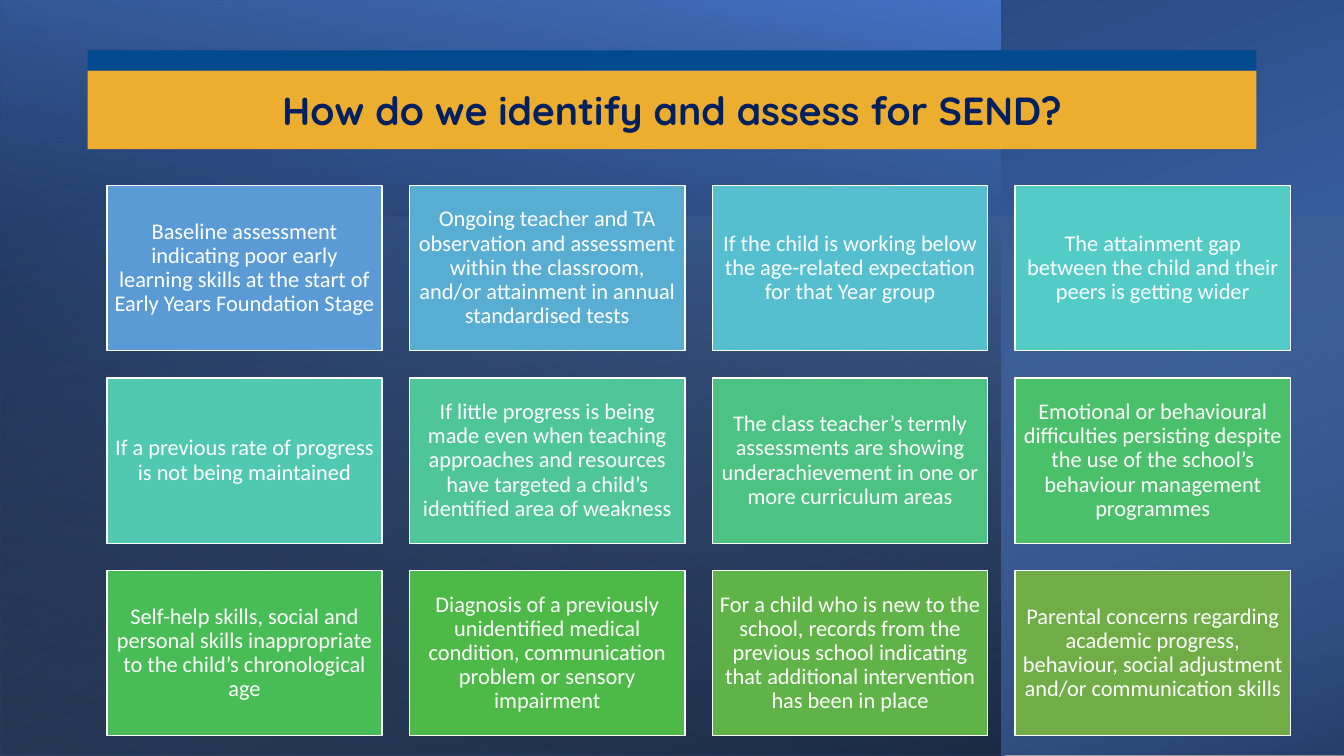
from lxml import etree
from pptx import Presentation
from pptx.dml.color import RGBColor
from pptx.enum.shapes import MSO_SHAPE
from pptx.enum.text import MSO_ANCHOR, MSO_AUTO_SIZE, PP_ALIGN
from pptx.oxml.ns import qn
from pptx.util import Inches, Pt

RECTANGLE = MSO_SHAPE.RECTANGLE
MIDDLE = MSO_ANCHOR.MIDDLE
CENTER = PP_ALIGN.CENTER

WHITE = RGBColor(0xFF, 0xFF, 0xFF)
BLACK = RGBColor(0x00, 0x00, 0x00)
BLUE = RGBColor(0x44, 0x72, 0xC4)
DARK_BLUE = RGBColor(0x20, 0x38, 0x64)
PALE_BLUE = RGBColor(0x9D, 0xC3, 0xE6)
NAVY = RGBColor(0x00, 0x20, 0x60)
GOLD = RGBColor(0xED, 0xAE, 0x2F)
STRIPE_BLUE = RGBColor(0x01, 0x4A, 0x8E)

TITLE = "How do we identify and assess for SEND?"
INDICATORS = [
    ("5B9BD5", "Baseline assessment indicating poor early learning skills at the start of Early Years Foundation Stage"),
    ("58ADD2", "Ongoing teacher and TA observation and assessment within the classroom, and/or attainment in annual standardised tests"),
    ("56BFCF", "If the child is working below the age-related expectation for that Year group"),
    ("53CCC8", "The attainment gap between the child and their peers is getting wider"),
    ("51C9B0", "If a previous rate of progress is not being maintained"),
    ("4FC699", "If little progress is being made even when teaching approaches and resources have targeted a child’s identified area of weakness"),
    ("4CC382", "The class teacher’s termly assessments are showing underachievement in one or more curriculum areas"),
    ("4AC06B", "Emotional or behavioural difficulties persisting despite the use of the school’s behaviour management programmes"),
    ("48BC55", "Self-help skills, social and personal skills inappropriate to the child’s chronological age"),
    ("4DB946", "Diagnosis of a previously unidentified medical condition, communication problem or sensory impairment"),
    ("60B347", "For a child who is new to the school, records from the previous school indicating that additional intervention has been in place"),
    ("70AD47", "Parental concerns regarding academic progress, behaviour, social adjustment and/or communication skills"),
]

SLIDE_WIDTH, SLIDE_HEIGHT = 13.33, 7.5
BACKDROPS = [
    ((2.92, -2.92, SLIDE_HEIGHT, SLIDE_WIDTH), 270, 200, [(8, BLUE, 100), (100, DARK_BLUE, 100)]),
    ((0, 0, 9.92, SLIDE_HEIGHT), 180, 80, [(8, BLACK, 52), (100, BLUE, 100)]),
    ((3.99, -1.84, 5.35, SLIDE_WIDTH), 270, 20, [(0, PALE_BLUE, 0), (100, BLACK, 46)]),
]
BANNER_LEFT, BANNER_WIDTH = 0.87, 11.59
STRIPE_TOP, STRIPE_HEIGHT = 0.5, 0.2
TITLE_HEIGHT = 0.78
COLUMNS = 4
GRID_LEFT, GRID_TOP = 1.06, 1.84
TILE_WIDTH = 2.73
TILE_HEIGHT = TILE_WIDTH * 0.6
TILE_GAP = TILE_WIDTH * 0.1
TILE_INSET = 0.07


def add_rectangle(slide, left, top, width, height):
    shape = slide.shapes.add_shape(
        RECTANGLE, Inches(left), Inches(top), Inches(width), Inches(height))
    shape.shadow.inherit = False
    shape.line.fill.background()
    return shape


def fill_solid(shape, color):
    shape.fill.solid()
    shape.fill.fore_color.rgb = color


def fill_gradient(shape, angle, stops):
    shape.fill.background()
    properties = shape.element.spPr
    gradient = etree.Element(qn("a:gradFill"), rotWithShape="1")
    stop_list = etree.SubElement(gradient, qn("a:gsLst"))
    for position, color, opacity in stops:
        stop = etree.SubElement(stop_list, qn("a:gs"), pos=str(position * 1000))
        value = etree.SubElement(stop, qn("a:srgbClr"), val=str(color))
        if opacity < 100:
            etree.SubElement(value, qn("a:alpha"), val=str(opacity * 1000))
    etree.SubElement(gradient, qn("a:lin"), ang=str(angle * 60000), scaled="0")
    properties.replace(properties.find(qn("a:noFill")), gradient)


def write_text(shape, text, font_name, size, color, bold=False):
    frame = shape.text_frame
    frame.word_wrap = True
    frame.auto_size = MSO_AUTO_SIZE.NONE
    frame.vertical_anchor = MIDDLE
    paragraph = frame.paragraphs[0]
    paragraph.alignment = CENTER
    run = paragraph.add_run()
    run.text = text
    run.font.name = font_name
    run.font.size = Pt(size)
    run.font.bold = bold
    run.font.color.rgb = color
    return paragraph


def add_backdrops(slide):
    for box, rotation, angle, stops in BACKDROPS:
        backdrop = add_rectangle(slide, *box)
        backdrop.rotation = rotation
        backdrop.element.spPr.find(qn("a:xfrm")).set("flipH", "1")
        fill_gradient(backdrop, angle, stops)


def add_banner(slide):
    title = slide.shapes.title
    title.left, title.top = Inches(BANNER_LEFT), Inches(STRIPE_TOP + STRIPE_HEIGHT)
    title.width, title.height = Inches(BANNER_WIDTH), Inches(TITLE_HEIGHT)
    fill_solid(title, GOLD)
    write_text(title, TITLE, "Quicksand", 28, NAVY, bold=True)
    title.element.getparent().append(title.element)
    stripe = add_rectangle(slide, BANNER_LEFT, STRIPE_TOP, BANNER_WIDTH, STRIPE_HEIGHT)
    fill_solid(stripe, STRIPE_BLUE)


def add_tiles(slide):
    for index, (color, text) in enumerate(INDICATORS):
        row, column = divmod(index, COLUMNS)
        tile = add_rectangle(
            slide,
            GRID_LEFT + column * (TILE_WIDTH + TILE_GAP),
            GRID_TOP + row * (TILE_HEIGHT + TILE_GAP),
            TILE_WIDTH, TILE_HEIGHT)
        fill_solid(tile, RGBColor.from_string(color))
        tile.line.color.rgb = WHITE
        tile.line.width = Pt(1)
        frame = tile.text_frame
        frame.margin_left = frame.margin_right = Inches(TILE_INSET)
        frame.margin_top = frame.margin_bottom = Inches(TILE_INSET)
        paragraph = write_text(tile, text, "Calibri", 16, WHITE)
        paragraph.line_spacing = 0.9


def main():
    presentation = Presentation()
    presentation.slide_width = Inches(SLIDE_WIDTH)
    presentation.slide_height = Inches(SLIDE_HEIGHT)
    slide = presentation.slides.add_slide(presentation.slide_layouts.get_by_name("Title Only"))
    add_backdrops(slide)
    add_banner(slide)
    add_tiles(slide)
    presentation.save("out.pptx")


if __name__ == "__main__":
    main()
